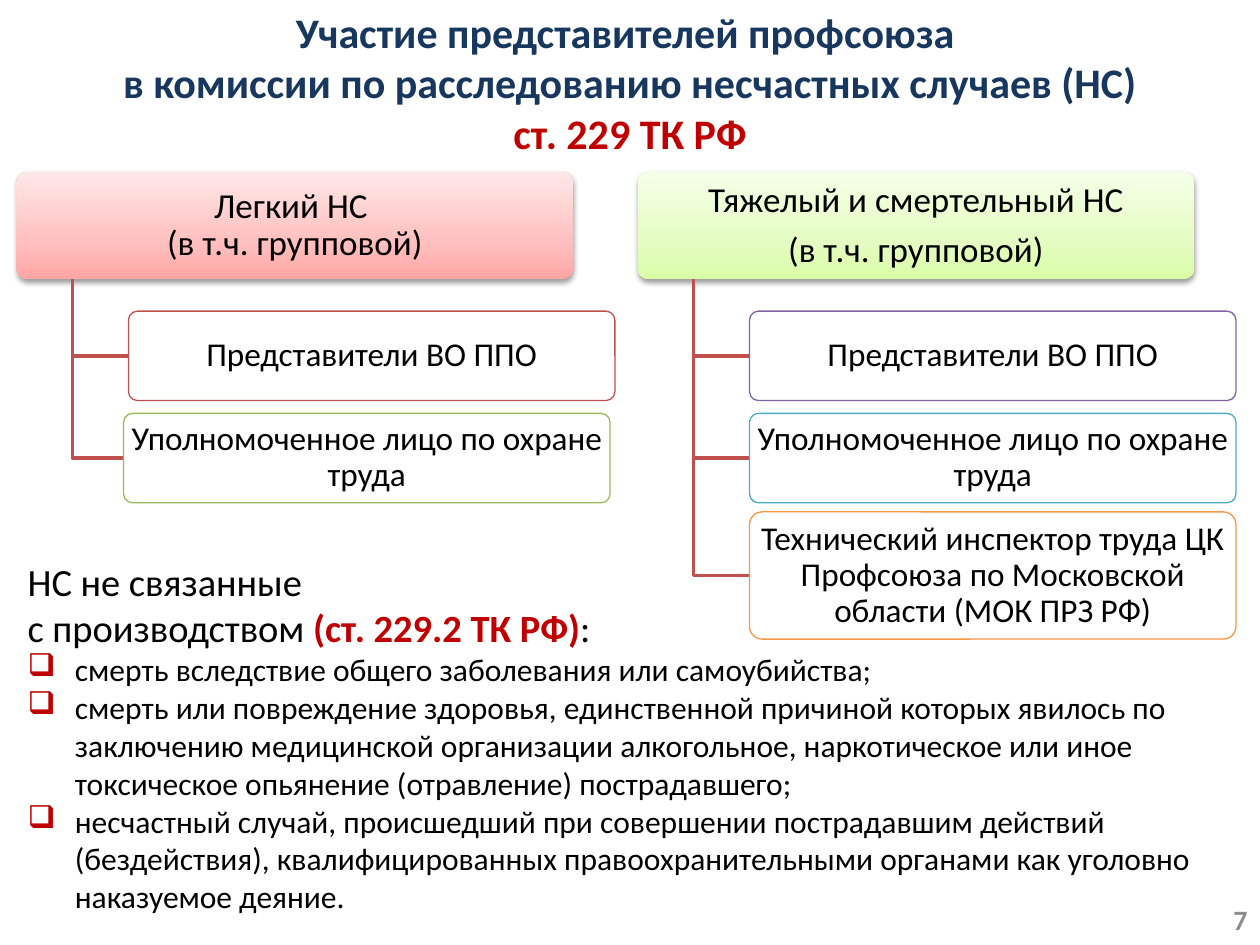
from lxml import etree
from pptx import Presentation
from pptx.dml.color import RGBColor
from pptx.enum import shapes, text
from pptx.oxml.ns import qn
from pptx.util import Pt

THEME = dict(font="Calibri", navy="17375E", red="C00000", black="000000", gray="8C8C8C",
             white="FFFFFF", line="C0504D", title=24, lead=22, head=20, node=19, body=18, number=16)

TITLE = [("Участие представителей профсоюза \vв комиссии по расследованию несчастных случаев (НС)", "navy"),
         ("ст. 229 ТК РФ", "red")]
COLUMNS = [
    dict(left=9.4, head=["Легкий НС \v(в т.ч. групповой)"],
         stops=[(0, "FFA6A5"), (35, "FFC0BF"), (100, "FFE7E7")],
         nodes=[("Представители ВО ППО", "C0504D", 64),
                ("Уполномоченное лицо по охране труда", "9BBB59", 61.2)]),
    dict(left=364.3, head=["Тяжелый и смертельный НС", "(в т.ч. групповой)"],
         stops=[(0, "DAFDA7"), (35, "E4FCC2"), (100, "F5FFE7")],
         nodes=[("Представители ВО ППО", "8064A2", 64),
                ("Уполномоченное лицо по охране труда", "4BACC6", 64),
                ("Технический инспектор труда ЦК Профсоюза по Московской области (МОК ПРЗ РФ)", "F79646", 64)]),
]
LEAD = [[("НС не связанные ", "black", False)],
        [("с производством ", "black", False), ("(ст. 229.2 ТК РФ)", "red", True), (":", "black", False)]]
CASES = [
    "смерть вследствие общего заболевания или самоубийства;",
    "смерть или повреждение здоровья, единственной причиной которых явилось по заключению медицинской "
    "организации алкогольное, наркотическое или иное токсическое опьянение (отравление) пострадавшего;",
    "несчастный случай, происшедший при совершении пострадавшим действий (бездействия), "
    "квалифицированных правоохранительными органами как уголовно наказуемое деяние.",
]
HEAD_TOP, HEAD_W, HEAD_H = 98.5, 318.2, 61
NODE_W, TRUNK = 278, 32
NODE_ROWS = [(177.8, 51.1), (236.2, 51.1), (292.5, 72.7)]
ALIGN = text.PP_ALIGN


def rgb(value):
    return RGBColor.from_string(THEME.get(value, value))


def sub(parent, tag, **attrs):
    return etree.SubElement(parent, qn(tag), {k: str(v) for k, v in attrs.items()})


def style(p, size, color="black", bold=False, align=ALIGN.LEFT):
    p.alignment = align
    f = p.font
    f.name, f.size, f.bold = THEME["font"], Pt(THEME[size]), bold
    f.color.rgb = rgb(color)


def paragraphs(tf, count):
    return [tf.paragraphs[0]] + [tf.add_paragraph() for _ in range(count - 1)]


def text_box(slide, *box):
    tf = slide.shapes.add_textbox(*map(Pt, box)).text_frame
    tf.word_wrap = True
    return tf


def card(slide, box, lines, size):
    sp = slide.shapes.add_shape(shapes.MSO_SHAPE.ROUNDED_RECTANGLE, *map(Pt, box))
    sp.adjustments[0] = 0.1
    sp.shadow.inherit = False
    tf = sp.text_frame
    tf.word_wrap = True
    tf.vertical_anchor = text.MSO_ANCHOR.MIDDLE
    tf.margin_left = tf.margin_right = Pt(2.7)
    tf.margin_top = tf.margin_bottom = Pt(2)
    for i, (p, line) in enumerate(zip(paragraphs(tf, len(lines)), lines)):
        p.text = line
        style(p, size, align=ALIGN.CENTER)
        p.line_spacing = 0.9
        if i < len(lines) - 1:
            p.space_after = Pt(7)
    return sp


def head_card(slide, col):
    sp = card(slide, (col["left"], HEAD_TOP, HEAD_W, HEAD_H), col["head"], "head")
    sp.line.fill.background()
    sp.fill.gradient()
    sp.fill.gradient_angle = 90
    spPr = sp._element.spPr
    stops = spPr.find(".//" + qn("a:gsLst"))
    stops.clear()
    for pos, color in col["stops"]:
        sub(sub(stops, "a:gs", pos=pos * 1000), "a:srgbClr", val=color)
    shadow = sub(spPr.find(qn("a:effectLst")), "a:outerShdw", blurRad=Pt(3.1), dist=Pt(1.6),
                 dir=5400000, rotWithShape=0)
    sub(sub(shadow, "a:srgbClr", val=THEME["black"]), "a:alpha", val=38000)


def elbow(slide, x, top, right, y):
    fb = slide.shapes.build_freeform(Pt(x), Pt(top))
    fb.add_line_segments([(Pt(x), Pt(y)), (Pt(right), Pt(y))], close=False)
    sp = fb.convert_to_shape()
    sp.shadow.inherit = False
    sp.fill.background()
    sp.line.color.rgb = rgb("line")
    sp.line.width = Pt(2)


def node_card(slide, box, label, color):
    sp = card(slide, box, [label], "node")
    sp.fill.solid()
    sp.fill.fore_color.rgb = rgb("white")
    sub(sp._element.spPr.find(".//" + qn("a:srgbClr")), "a:alpha", val=90000)
    sp.line.color.rgb = rgb(color)
    sp.line.width = Pt(0.75)


def bullet(p):
    pPr = p._p.get_or_add_pPr()
    pPr.set("marL", str(Pt(27)))
    pPr.set("indent", str(Pt(-27)))
    marks = etree.Element(qn("a:pPr"))
    sub(sub(marks, "a:buClr"), "a:srgbClr", val=THEME["red"])
    sub(marks, "a:buChar", char="❑")
    for i, mark in enumerate(list(marks)):
        pPr.insert(i, mark)


def main():
    prs = Presentation()
    prs.slide_width, prs.slide_height = Pt(720), Pt(540)
    slide = prs.slides.add_slide(prs.slide_layouts[6])

    tf = text_box(slide, 552.2, 511.2, 167.8, 28.8)
    tf.vertical_anchor = text.MSO_ANCHOR.MIDDLE
    tf.text = "7"
    style(tf.paragraphs[0], "number", "gray", True, ALIGN.RIGHT)

    tf = text_box(slide, 0, 0, 720, 94.3)
    for p, (line, color) in zip(paragraphs(tf, len(TITLE)), TITLE):
        p.text = line
        style(p, "title", color, True, ALIGN.CENTER)

    tf = text_box(slide, 8.7, 315.4, 697.7, 213)
    ps = paragraphs(tf, len(LEAD) + len(CASES))
    for p, runs in zip(ps, LEAD):
        style(p, "lead", align=ALIGN.JUSTIFY)
        for words, color, bold in runs:
            r = p.add_run()
            r.text = words
            r.font.bold = bold
            r.font.color.rgb = rgb(color)
    for p, case in zip(ps[len(LEAD):], CASES):
        p.text = case
        style(p, "body")
        bullet(p)

    for col in COLUMNS:
        left = col["left"]
        head_card(slide, col)
        for (label, color, indent), (top, height) in zip(col["nodes"], NODE_ROWS):
            elbow(slide, left + TRUNK, HEAD_TOP + HEAD_H, left + indent, top + height / 2)
            node_card(slide, (left + indent, top, NODE_W, height), label, color)

    prs.save("out.pptx")


if __name__ == "__main__":
    main()
